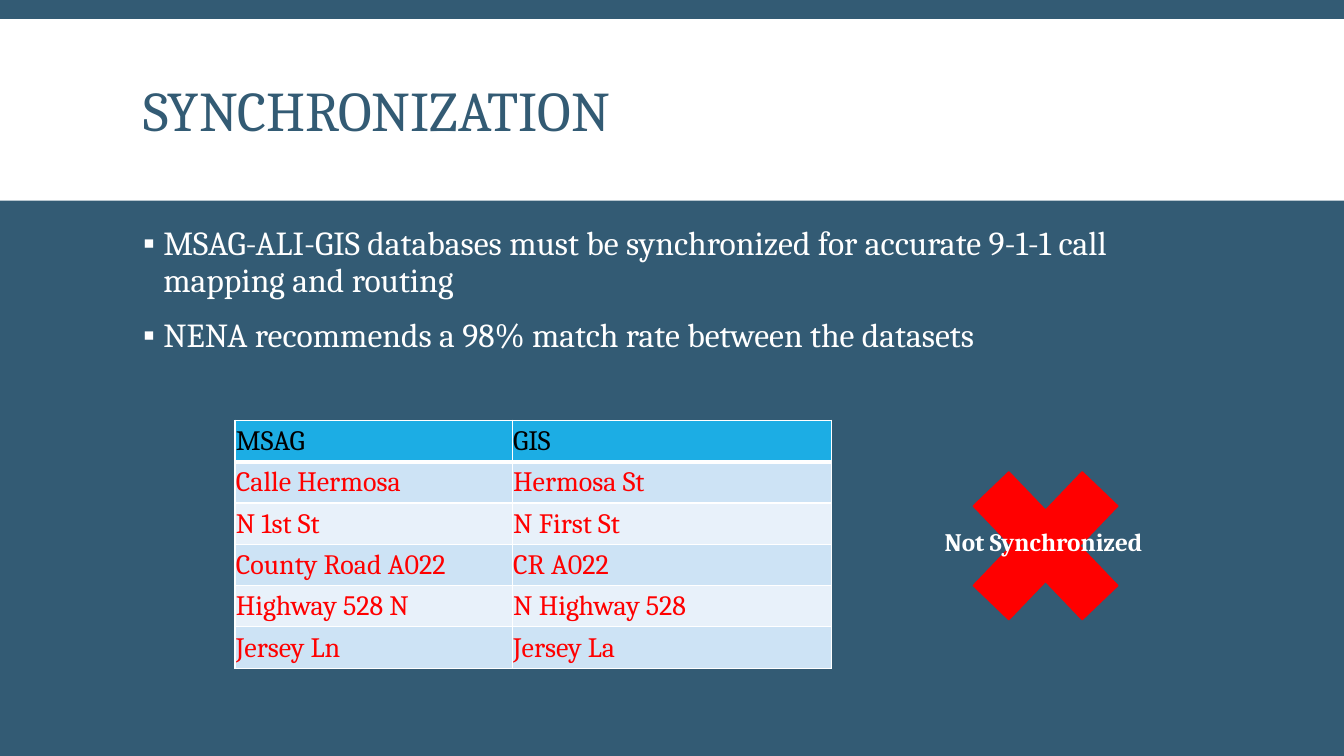
import pptx
import pptx.util
import pptx.dml.color
import pptx.enum.shapes
import pptx.enum.text
import pptx.oxml
import pptx.oxml.ns
from dataclasses import dataclass

HEADING = "SYNCHRONIZATION"
POINTS = [
    "MSAG-ALI-GIS databases must be synchronized for accurate 9-1-1 call mapping and routing",
    "NENA recommends a 98% match rate between the datasets",
]
STREETS = [
    ("MSAG", "GIS"),
    ("Calle Hermosa", "Hermosa St"),
    ("N 1st St", "N First St"),
    ("County Road A022", "CR A022"),
    ("Highway 528 N", "N Highway 528"),
    ("Jersey Ln", "Jersey La"),
]
VERDICT = "Not Synchronized"


@dataclass(frozen=True)
class Theme:
    font: str = "Cambria"
    navy: str = "335B74"
    white: str = "FFFFFF"
    black: str = "000000"
    red: str = "FF0000"
    header: str = "1CADE4"
    bands: tuple = ("E8F1FA", "CDE3F5")
    heading_size: int = 40
    point_size: int = 24
    street_size: int = 20
    verdict_size: int = 18


THEME = Theme()
WIDTH, HEIGHT = 13.33, 7.5
MARGIN = 1.32
CONTENT_WIDTH = WIDTH - 2 * MARGIN
COLUMNS = (2.75, 3.17)
ROW = 0.41
ANCHOR = pptx.enum.text.MSO_ANCHOR
ALIGN = pptx.enum.text.PP_ALIGN
SHAPE = pptx.enum.shapes.MSO_SHAPE


def inches(*lengths):
    return [pptx.util.Inches(length) for length in lengths]


def rgb(value):
    return pptx.dml.color.RGBColor.from_string(value)


def paint(target, colour):
    target.fill.solid()
    target.fill.fore_color.rgb = rgb(colour)


def place(part, left, top, width, height):
    part.left, part.top, part.width, part.height = inches(left, top, width, height)


def write(paragraph, text, size, colour, bold=False, align=ALIGN.LEFT,
          spacing=None, before=None, after=None):
    paragraph.alignment = align
    paragraph.line_spacing = spacing
    if before is not None:
        paragraph.space_before = pptx.util.Pt(before)
    if after is not None:
        paragraph.space_after = pptx.util.Pt(after)
    run = paragraph.add_run()
    run.text = text
    run.font.name = THEME.font
    run.font.size = pptx.util.Pt(size)
    run.font.bold = bold
    run.font.color.rgb = rgb(colour)


def add_bullet(paragraph, indent):
    properties = paragraph._p.get_or_add_pPr()
    properties.set("marL", str(indent))
    properties.set("indent", str(-indent))
    namespace = pptx.oxml.ns.nsdecls("a")
    for markup in (
        f'<a:buClr {namespace}><a:srgbClr val="{THEME.white}"/></a:buClr>',
        f'<a:buFont {namespace} typeface="Arial"/>',
        f'<a:buChar {namespace} char="▪"/>',
    ):
        properties.append(pptx.oxml.parse_xml(markup))


def border(cell, **weights):
    properties = cell._tc.get_or_add_tcPr()
    for position, (side, weight) in enumerate(weights.items()):
        properties.insert(position, pptx.oxml.parse_xml(
            f'<a:ln{side} {pptx.oxml.ns.nsdecls("a")} w="{pptx.util.Pt(weight)}">'
            f'<a:solidFill><a:srgbClr val="{THEME.white}"/></a:solidFill></a:ln{side}>'))


def add_heading(slide):
    heading = slide.shapes.title
    place(heading, MARGIN, 0.31, CONTENT_WIDTH, 1.65)
    heading.text_frame.vertical_anchor = ANCHOR.MIDDLE
    write(heading.text_frame.paragraphs[0], HEADING, THEME.heading_size,
          THEME.navy, spacing=0.85)
    band = slide.shapes.add_shape(SHAPE.RECTANGLE, *inches(0, 0.19, WIDTH, 1.8))
    band.shadow.inherit = False
    paint(band, THEME.white)
    band.line.fill.background()
    heading.element.addprevious(band.element)


def add_points(slide):
    body = slide.placeholders[1]
    place(body, MARGIN, 2.2, CONTENT_WIDTH, 4.6)
    frame = body.text_frame
    frame.vertical_anchor = ANCHOR.TOP
    for index, point in enumerate(POINTS):
        paragraph = frame.add_paragraph() if index else frame.paragraphs[0]
        write(paragraph, point, THEME.point_size, THEME.white,
              spacing=0.9, before=12, after=2)
        add_bullet(paragraph, pptx.util.Inches(0.2))


def add_streets(slide):
    streets = slide.shapes.add_table(
        len(STREETS), len(COLUMNS),
        *inches(2.33, 4.17, sum(COLUMNS), ROW * len(STREETS))).table
    for column, width in zip(streets.columns, COLUMNS):
        column.width = pptx.util.Inches(width)
    for index, names in enumerate(STREETS):
        streets.rows[index].height = pptx.util.Inches(ROW)
        fill = THEME.bands[index % 2] if index else THEME.header
        colour = THEME.red if index else THEME.black
        for column, name in enumerate(names):
            cell = streets.cell(index, column)
            cell.margin_left = cell.margin_top = cell.margin_right = pptx.util.Inches(0.01)
            cell.margin_bottom = 0
            cell.vertical_anchor = ANCHOR.MIDDLE
            paint(cell, fill)
            border(cell, L=1, R=1, T=3 if index == 1 else 1, B=1 if index else 3)
            write(cell.text_frame.paragraphs[0], name, THEME.street_size, colour)


def add_verdict(slide):
    cross = slide.shapes.add_shape(SHAPE.MATH_MULTIPLY, *inches(9.33, 4.33, 2.08, 2.17))
    cross.shadow.inherit = False
    paint(cross, THEME.red)
    cross.line.color.rgb = rgb(THEME.red)
    cross.line.width = pptx.util.Pt(1)
    verdict = slide.shapes.add_textbox(*inches(9.27, 5.17, 2.24, 0.4))
    verdict.text_frame.word_wrap = False
    verdict.text_frame.auto_size = pptx.enum.text.MSO_AUTO_SIZE.SHAPE_TO_FIT_TEXT
    write(verdict.text_frame.paragraphs[0], VERDICT, THEME.verdict_size,
          THEME.white, bold=True)


def main():
    deck = pptx.Presentation()
    deck.slide_width, deck.slide_height = inches(WIDTH, HEIGHT)
    slide = deck.slides.add_slide(deck.slide_layouts[1])
    paint(slide.background, THEME.navy)
    add_heading(slide)
    add_points(slide)
    add_streets(slide)
    add_verdict(slide)
    deck.save("out.pptx")


if __name__ == "__main__":
    main()
